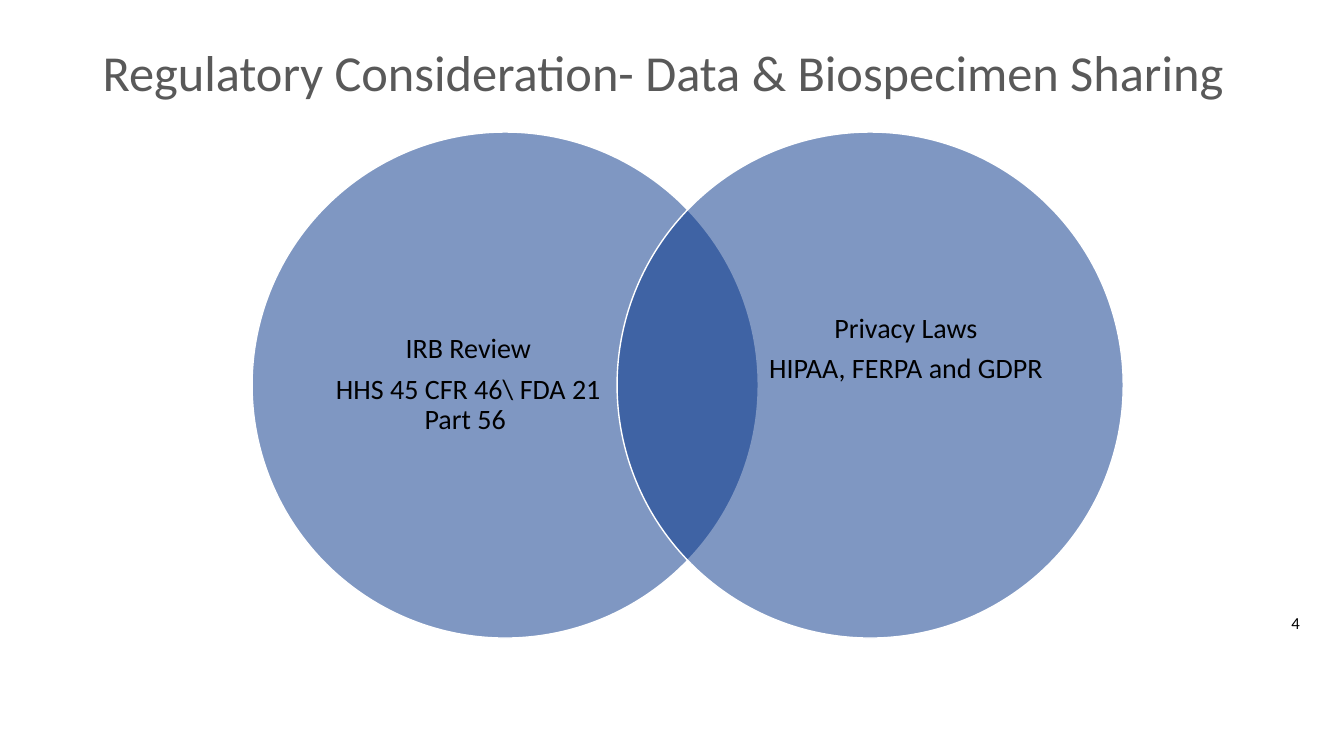
"""Build a slide with a two-circle Venn diagram of data sharing regulations."""
from lxml import etree
from pptx import Presentation
from pptx.dml.color import RGBColor
from pptx.enum.shapes import MSO_SHAPE
from pptx.enum.text import MSO_ANCHOR, PP_ALIGN
from pptx.oxml.ns import qn
from pptx.util import Inches, Pt

OVAL = MSO_SHAPE.OVAL
MIDDLE = MSO_ANCHOR.MIDDLE
LEFT, CENTER, RIGHT = PP_ALIGN.LEFT, PP_ALIGN.CENTER, PP_ALIGN.RIGHT

NAVY = RGBColor(0x00, 0x30, 0x87)
GRAY = RGBColor(0x59, 0x59, 0x59)
BLACK = RGBColor(0x00, 0x00, 0x00)
WHITE = RGBColor(0xFF, 0xFF, 0xFF)

CIRCLE_TOP, CIRCLE_SIZE = 1.31, 5.02
LABEL_WIDTH, LABEL_HEIGHT = 2.89, 3.84

presentation = Presentation()
presentation.slide_width = Inches(13.33)
presentation.slide_height = Inches(7.5)
slide = presentation.slides.add_slide(presentation.slide_layouts[6])


def add_text(text, left, top, width, height, size, color=BLACK, align=LEFT,
             line_spacing=1.0, space_after=0, inset=None):
    box = slide.shapes.add_textbox(Inches(left), Inches(top), Inches(width), Inches(height))
    frame = box.text_frame
    frame.word_wrap = True
    frame.vertical_anchor = MIDDLE
    if inset is not None:
        frame.margin_left = frame.margin_right = Inches(inset)
        frame.margin_top = frame.margin_bottom = Inches(inset)
    frame.text = text
    for paragraph in frame.paragraphs:
        paragraph.alignment = align
        paragraph.line_spacing = line_spacing
        paragraph.space_after = Pt(space_after)
        paragraph.font.name = "Calibri"
        paragraph.font.size = Pt(size)
        paragraph.font.color.rgb = color


add_text("4", 9.99, 5.98, 3, 0.4, size=12, align=RIGHT)
add_text("Regulatory Consideration- Data & Biospecimen Sharing", 0.92, 0.4, 11.5, 0.69,
         size=36, color=GRAY, line_spacing=0.9)

regulations = [
    (2.5, 3.2, 1.9, "IRB Review\nHHS 45 CFR 46\\ FDA 21 Part 56 "),
    (6.12, 7.54, 1.55, "Privacy Laws\nHIPAA, FERPA and GDPR"),
]
for circle_left, label_left, label_top, label in regulations:
    circle = slide.shapes.add_shape(OVAL, Inches(circle_left), Inches(CIRCLE_TOP),
                                    Inches(CIRCLE_SIZE), Inches(CIRCLE_SIZE))
    circle.shadow.inherit = False
    circle.fill.solid()
    circle.fill.fore_color.rgb = NAVY
    fill_color = circle.fill._xPr.find(qn("a:solidFill")).find(qn("a:srgbClr"))
    etree.SubElement(fill_color, qn("a:alpha"), val="50000")
    circle.line.color.rgb = WHITE
    circle.line.width = Pt(1)
    add_text(label, label_left, label_top, LABEL_WIDTH, LABEL_HEIGHT, size=20,
             align=CENTER, line_spacing=0.9, space_after=7, inset=0)

presentation.save("out.pptx")
